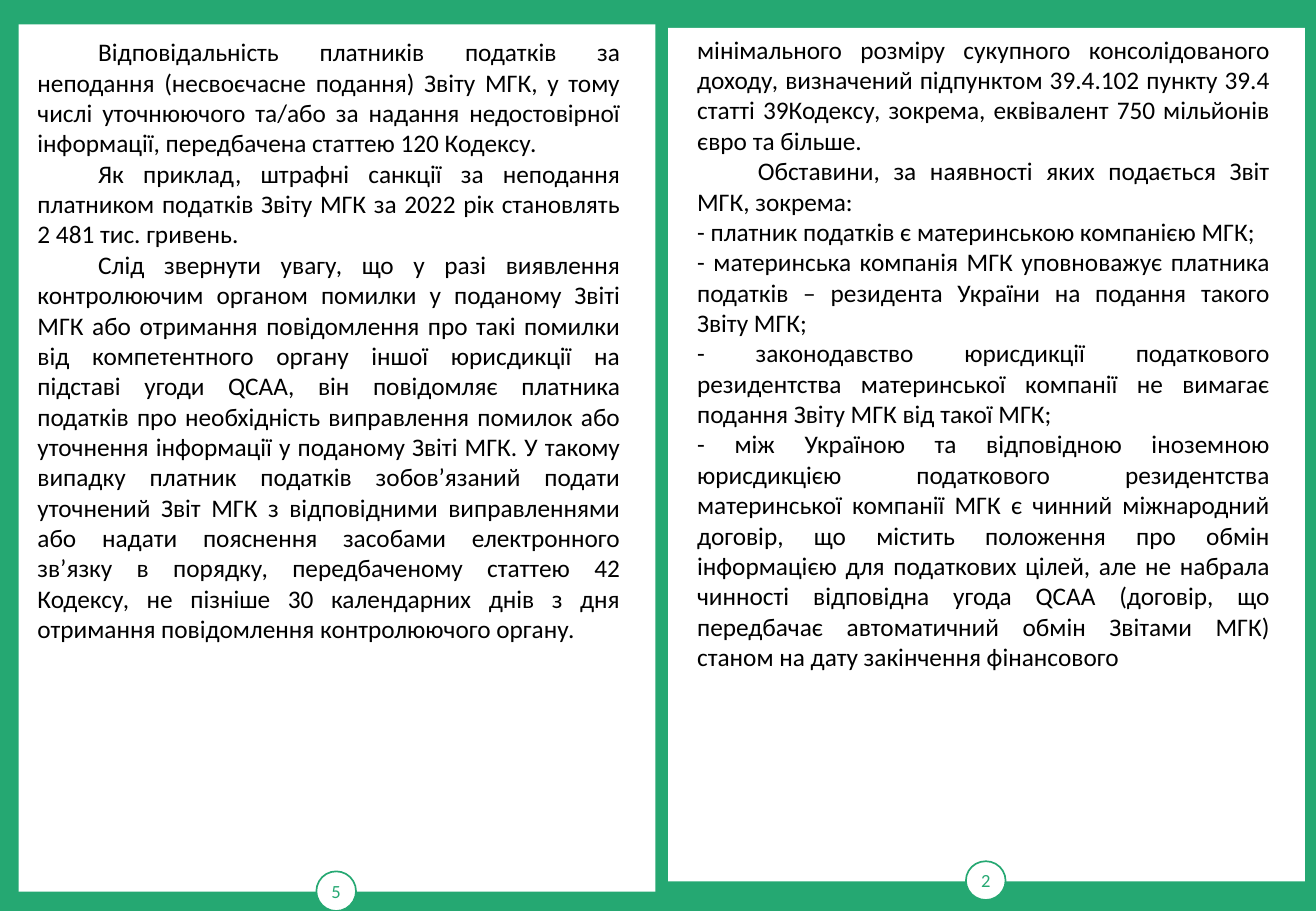
"""Build a two-page booklet spread about country-by-country reporting."""
import pptx
import pptx.dml.color
import pptx.enum.shapes
import pptx.enum.text
import pptx.oxml
import pptx.oxml.ns
import pptx.util

Pt = pptx.util.Pt
COLORS = {"green": "25A872", "white": "FFFFFF", "black": "000000"}
FIRST_LINE_INDENT = Pt(36)

PAGES = [
    {
        "panel": (396, 16.5, 377.5, 506),
        "badge": (572.5, 510.5, 23.5, 23),
        "body": (406, 16.5, 354, 498),
        "number": "2",
        "paragraphs": [
            (False, "мінімального розміру сукупного консолідованого доходу, визначений підпунктом 39.4.102 пункту 39.4 статті 39Кодексу, зокрема, еквівалент 750 мільйонів євро та більше."),
            (True, "Обставини, за наявності яких подається Звіт МГК, зокрема:"),
            (False, "- платник податків є материнською компанією МГК;"),
            (False, "- материнська компанія МГК уповноважує платника податків – резидента України на подання такого Звіту МГК;"),
            (False, "- законодавство юрисдикції податкового резидентства материнської компанії не вимагає подання Звіту МГК від такої МГК;"),
            (False, "- між Україною та відповідною іноземною юрисдикцією податкового резидентства материнської компанії МГК є чинний міжнародний договір, що містить положення про обмін інформацією для податкових цілей, але не набрала чинності відповідна угода QCAA (договір, що передбачає автоматичний обмін Звітами МГК) станом на дату закінчення фінансового"),
        ],
    },
    {
        "panel": (11, 14.5, 377.5, 514),
        "badge": (187.5, 516.5, 23.5, 23.5),
        "body": (15, 18, 360, 522),
        "number": "5",
        "paragraphs": [
            (True, "Відповідальність платників податків за неподання (несвоєчасне подання) Звіту МГК, у тому числі уточнюючого та/або за надання недостовірної інформації, передбачена статтею 120 Кодексу."),
            (True, "Як приклад, штрафні санкції за неподання платником податків Звіту МГК за 2022 рік становлять 2 481 тис. гривень."),
            (True, "Слід звернути увагу, що у разі виявлення контролюючим органом помилки у поданому Звіті МГК або отримання повідомлення про такі помилки від компетентного органу іншої юрисдикції на підставі угоди QCAA, він повідомляє платника податків про необхідність виправлення помилок або уточнення інформації у поданому Звіті МГК. У такому випадку платник податків зобов’язаний подати уточнений Звіт МГК з відповідними виправленнями або надати пояснення засобами електронного зв’язку в порядку, передбаченому статтею 42 Кодексу, не пізніше 30 календарних днів з дня отримання повідомлення контролюючого органу."),
        ],
    },
]


def color(name):
    return pptx.dml.color.RGBColor.from_string(COLORS[name])


def write(paragraph, text, size, color_name, formats):
    run = paragraph.add_run()
    run.text = text
    run.font.name = "Calibri"
    run.font.size = Pt(size)
    run.font.color.rgb = color(color_name)
    for name, value in formats.items():
        setattr(paragraph, name, value)


presentation = pptx.Presentation()
presentation.slide_width = Pt(780)
presentation.slide_height = Pt(540)
slide = presentation.slides.add_slide(presentation.slide_layouts.get_by_name("Two Content"))
slide.background.fill.solid()
slide.background.fill.fore_color.rgb = color("green")

title, *bodies = slide.placeholders
title.element.getparent().remove(title.element)

shape_kinds = pptx.enum.shapes.MSO_SHAPE
alignments = pptx.enum.text.PP_ALIGN
body_format = {
    "alignment": alignments.JUSTIFY,
    "space_before": Pt(0),
    "space_after": Pt(0),
    "line_spacing": 1.0,
}
frame_format = {
    "word_wrap": True,
    "auto_size": pptx.enum.text.MSO_AUTO_SIZE.NONE,
    "vertical_anchor": pptx.enum.text.MSO_ANCHOR.TOP,
}
badge_format = {
    "vertical_anchor": pptx.enum.text.MSO_ANCHOR.MIDDLE,
    "margin_left": 0,
    "margin_right": 0,
    "margin_top": 0,
    "margin_bottom": 0,
}

for page, body in zip(PAGES, bodies):
    group = slide.shapes.add_group_shape()
    panel = group.shapes.add_shape(shape_kinds.RECTANGLE, *map(Pt, page["panel"]))
    badge = group.shapes.add_shape(shape_kinds.OVAL, *map(Pt, page["badge"]))
    for shape in (panel, badge):
        shape.shadow.inherit = False
        shape.fill.solid()
        shape.fill.fore_color.rgb = color("white")
    panel.line.fill.background()
    badge.line.color.rgb = color("green")
    badge.line.width = Pt(1)
    for name, value in badge_format.items():
        setattr(badge.text_frame, name, value)
    write(badge.text_frame.paragraphs[0], page["number"], 11, "green", {"alignment": alignments.CENTER})

    body.left, body.top, body.width, body.height = map(Pt, page["body"])
    for name, value in frame_format.items():
        setattr(body.text_frame, name, value)
    for index, (indented, text) in enumerate(page["paragraphs"]):
        paragraph = body.text_frame.add_paragraph() if index else body.text_frame.paragraphs[0]
        write(paragraph, text, 15, "black", body_format)
        properties = paragraph._p.get_or_add_pPr()
        properties.set("marL", "0")
        properties.set("indent", str(FIRST_LINE_INDENT if indented else 0))
        properties.append(pptx.oxml.parse_xml(f"<a:buNone {pptx.oxml.ns.nsdecls('a')}/>"))
    body.element.getparent().append(body.element)

presentation.save("out.pptx")
